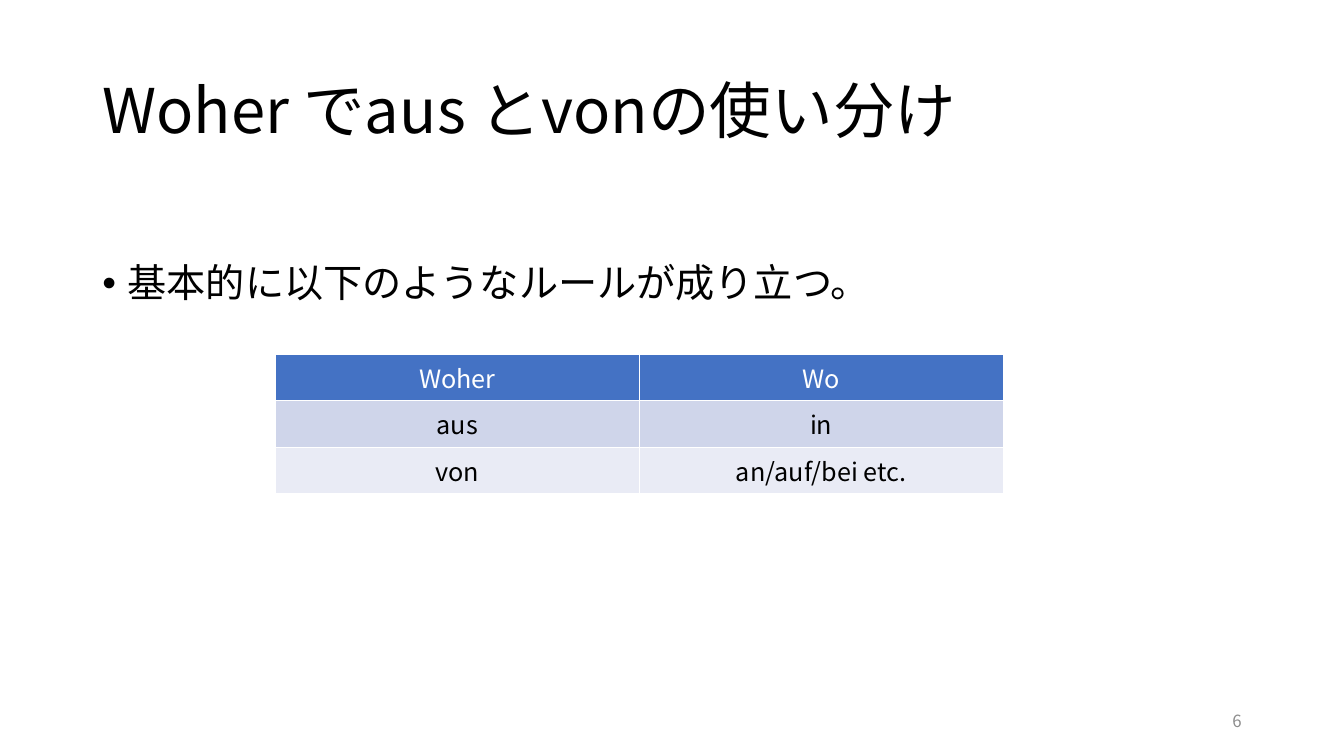
import pptx
import pptx.util
import pptx.dml.color
import pptx.enum.text
import pptx.oxml
import pptx.oxml.ns
from pptx.util import Cm

FONT = "Noto Sans CJK JP"
ALIGN = pptx.enum.text.PP_ALIGN
ANCHOR = pptx.enum.text.MSO_ANCHOR


def color(hex_string):
    return pptx.dml.color.RGBColor.from_string(hex_string)


def write(frame, text, size, hex_string, **paragraph_format):
    """Fill the first paragraph of a text frame and format it."""
    para = frame.paragraphs[0]
    for name, value in paragraph_format.items():
        setattr(para, name, value)
    span = para.add_run()
    span.text = text
    span.font.size = pptx.util.Pt(size)
    span.font.name = FONT
    span.font.color.rgb = color(hex_string)
    east_asian = pptx.oxml.parse_xml(
        f'<a:ea {pptx.oxml.ns.nsdecls("a")} typeface="{FONT}"/>')
    span.font._element.find(pptx.oxml.ns.qn("a:latin")).addnext(east_asian)
    return para


deck = pptx.Presentation()
deck.slide_width, deck.slide_height = Cm(33.87), Cm(19.05)
page = deck.slides.add_slide(deck.slide_layouts[5])

# Title, rule and page number
title = page.shapes.title
rule = page.shapes.add_textbox(Cm(2.33), Cm(6.53), Cm(29.21), Cm(10.64))
number = page.shapes.add_textbox(Cm(23.92), Cm(17.66), Cm(7.62), Cm(1.01))
title_place = {"left": Cm(2.33), "top": Cm(1.01), "width": Cm(29.21), "height": Cm(3.68)}
for name, value in title_place.items():
    setattr(title, name, value)
for box, anchor in ((title, ANCHOR.MIDDLE), (rule, ANCHOR.TOP), (number, ANCHOR.MIDDLE)):
    frame_format = {"word_wrap": True, "vertical_anchor": anchor,
                    "auto_size": pptx.enum.text.MSO_AUTO_SIZE.NONE}
    for name, value in frame_format.items():
        setattr(box.text_frame, name, value)

write(title.text_frame, "Woher でaus とvonの使い分け", 44, "000000",
      alignment=ALIGN.LEFT, line_spacing=0.9)
rule_para = write(rule.text_frame, "基本的に以下のようなルールが成り立つ。", 28, "000000",
                  line_spacing=0.9)
write(number.text_frame, "6", 12, "8C8C8C", alignment=ALIGN.RIGHT)

# Bullet with a hanging indent
props = rule_para._p.get_or_add_pPr()
props.set("marL", str(Cm(0.64)))
props.set("indent", str(-Cm(0.64)))
for child in ('<a:buFont {} typeface="Arial"/>', '<a:buChar {} char="•"/>'):
    props.append(pptx.oxml.parse_xml(child.format(pptx.oxml.ns.nsdecls("a"))))

# Table of prepositions: row fill, text colour, words
rows = [
    ("4472C4", "FFFFFF", ("Woher", "Wo")),
    ("CFD5EA", "000000", ("aus", "in")),
    ("E9EBF5", "000000", ("von", "an/auf/bei etc.")),
]
table = page.shapes.add_table(len(rows), 2, Cm(6.94), Cm(8.92), Cm(18.34), Cm(3.09)).table
for row_index, (fill, text_color, words) in enumerate(rows):
    for column_index, word in enumerate(words):
        cell = table.cell(row_index, column_index)
        write(cell.text_frame, word, 18, text_color, alignment=ALIGN.CENTER)
        cell.fill.solid()
        cell.fill.fore_color.rgb = color(fill)
        # White one-point borders come before the fill in the cell properties
        for position, side in enumerate(("lnL", "lnR", "lnT", "lnB")):
            border = pptx.oxml.parse_xml(
                f'<a:{side} {pptx.oxml.ns.nsdecls("a")} w="{pptx.util.Pt(1)}">'
                f'<a:solidFill><a:srgbClr val="FFFFFF"/></a:solidFill></a:{side}>')
            cell._tc.get_or_add_tcPr().insert(position, border)

deck.save("out.pptx")
